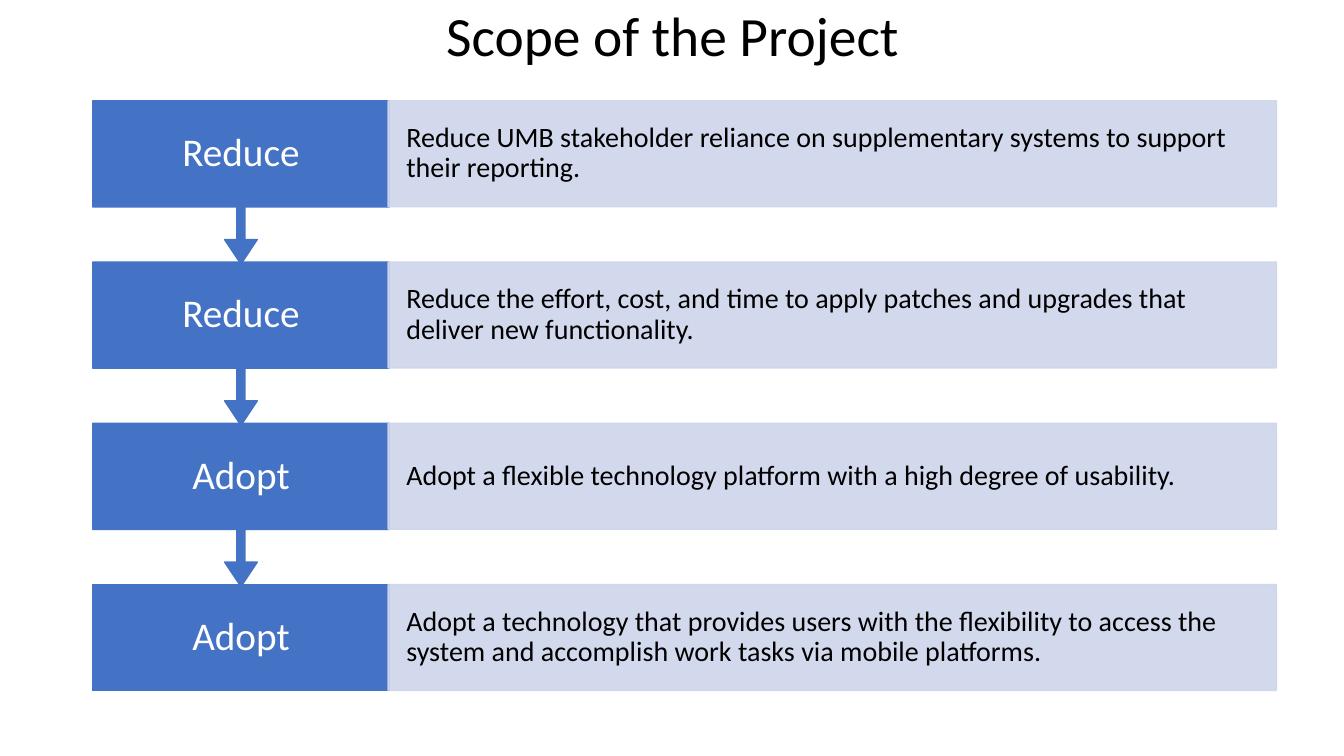
from dataclasses import dataclass

from lxml.etree import SubElement
from pptx import Presentation
from pptx.dml.color import RGBColor
from pptx.enum.shapes import MSO_SHAPE as Kind
from pptx.enum.text import MSO_ANCHOR as Anchor, MSO_AUTO_SIZE as Fit, PP_ALIGN as Align
from pptx.oxml.ns import qn
from pptx.util import Inches, Pt

BLUE = RGBColor(0x44, 0x72, 0xC4)
PALE = RGBColor(0xCF, 0xD5, 0xEA)
BLACK = RGBColor(0, 0, 0)
WHITE = RGBColor(0xFF, 0xFF, 0xFF)

LEFT, TOP, PITCH = 0.92, 1.0, 1.6
LABEL_W, DETAIL_X, DETAIL_W = 2.94, 3.85, 8.81
BOX_H, ARROW_H = 1.05, 1.62


@dataclass
class Step:
    label: str
    detail: str


STEPS = [
    Step("Reduce", "Reduce UMB stakeholder reliance on supplementary systems to support their reporting."),
    Step("Reduce", "Reduce the effort, cost, and time to apply patches and upgrades that deliver new functionality."),
    Step("Adopt", "Adopt a flexible technology platform with a high degree of usability."),
    Step("Adopt", "Adopt a technology that provides users with the flexibility to access the system and accomplish work tasks via mobile platforms."),
]


def write(shape, text: str, size: float, color: RGBColor, align: Align,
          side: float, edge: float) -> None:
    frame = shape.text_frame
    frame.text = text
    frame.word_wrap = True
    frame.auto_size = Fit.NONE
    frame.vertical_anchor = Anchor.MIDDLE
    frame.margin_left = frame.margin_right = Inches(side)
    frame.margin_top = frame.margin_bottom = Inches(edge)
    para = frame.paragraphs[0]
    para.alignment = align
    para.line_spacing = 0.9
    font = para.runs[0].font
    font.name = "Calibri"
    font.size = Pt(size)
    font.color.rgb = color


def add_box(slide, kind: Kind, x: float, y: float, w: float, h: float, color: RGBColor):
    box = slide.shapes.add_shape(kind, Inches(x), Inches(y), Inches(w), Inches(h))
    box.shadow.inherit = False
    box.fill.solid()
    box.fill.fore_color.rgb = color
    box.line.color.rgb = color
    box.line.width = Pt(1)
    return box


def fade(box, share: int) -> None:
    for tone in box.fill._xPr.iter(qn("a:srgbClr")):
        SubElement(tone, qn("a:alpha")).set("val", str(share * 1000))


def add_step(slide, step: Step, y: float, last: bool) -> None:
    if last:
        label = add_box(slide, Kind.RECTANGLE, LEFT, y, LABEL_W, BOX_H, BLUE)
    else:
        label = add_box(slide, Kind.DOWN_ARROW_CALLOUT, LEFT, y, LABEL_W, ARROW_H, BLUE)
        for i, value in enumerate((0.05, 0.1, 0.15, 0.65)):
            label.adjustments[i] = value
    write(label, step.label, 28, WHITE, Align.CENTER, 0.21, 0.22)
    detail = add_box(slide, Kind.RECTANGLE, DETAIL_X, y, DETAIL_W, BOX_H, PALE)
    fade(detail, 90)
    write(detail, step.detail, 20, BLACK, Align.LEFT, 0.18, 0.28)


def main() -> None:
    deck = Presentation()
    deck.slide_width, deck.slide_height = Inches(13.33), Inches(7.5)
    slide = deck.slides.add_slide(deck.slide_layouts[5])
    title = slide.shapes.title
    title.left, title.top = Inches(LEFT), Inches(0.08)
    title.width, title.height = Inches(11.5), Inches(0.6)
    write(title, "Scope of the Project", 39.6, BLACK, Align.CENTER, 0.1, 0)
    final = len(STEPS) - 1
    for i, step in reversed(list(enumerate(STEPS))):
        add_step(slide, step, TOP + i * PITCH, i == final)
    deck.save("out.pptx")


if __name__ == "__main__":
    main()
